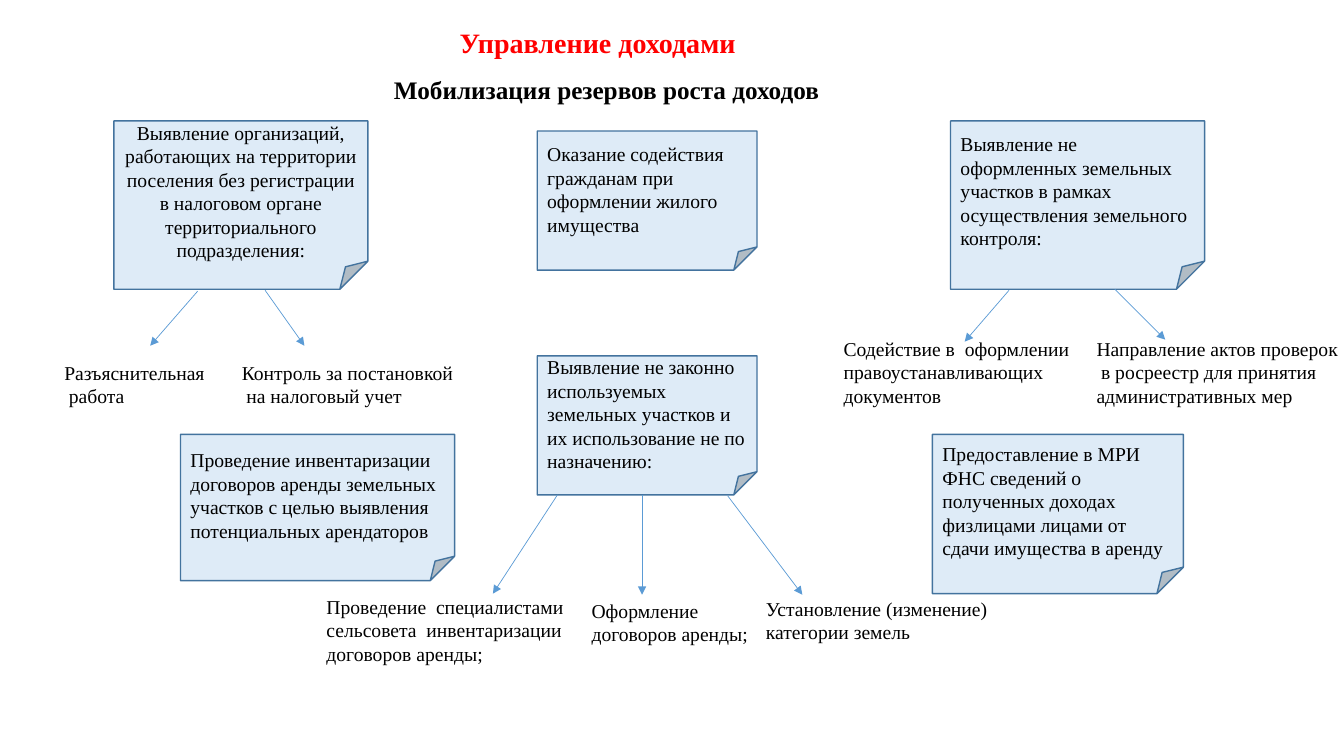
from dataclasses import dataclass

from lxml.etree import SubElement
from pptx import Presentation
from pptx.dml.color import RGBColor
from pptx.enum.shapes import MSO_CONNECTOR, MSO_SHAPE
from pptx.enum.text import MSO_ANCHOR, MSO_AUTO_SIZE, PP_ALIGN
from pptx.oxml.ns import qn
from pptx.shapes.autoshape import Shape
from pptx.slide import Slide
from pptx.util import Inches, Pt


@dataclass(frozen=True)
class Theme:
    font: str = "Times New Roman"
    heading: RGBColor = RGBColor(0xFF, 0x00, 0x00)
    ink: RGBColor = RGBColor(0x00, 0x00, 0x00)
    note_fill: RGBColor = RGBColor(0xDE, 0xEB, 0xF7)
    note_line: RGBColor = RGBColor(0x43, 0x73, 0x9E)
    arrow: RGBColor = RGBColor(0x5B, 0x9B, 0xD5)
    heading_size: int = 20
    subheading_size: int = 18
    body_size: int = 14
    note_width: float = 1
    arrow_width: float = 0.5


THEME = Theme()
CELL = Inches(0.1)  # one column or row of the slide grid
COLUMNS, ROWS = 133.33, 75
HANGING_SPACE = 0.45  # first-line indent, in columns


@dataclass(frozen=True)
class Area:
    column: float
    row: float
    columns: float
    rows: float

    def lengths(self) -> tuple[int, ...]:
        return tuple(cells(n) for n in (self.column, self.row, self.columns, self.rows))


@dataclass(frozen=True)
class Note:
    """A folded sheet naming one direction of work."""
    area: Area
    lines: tuple[str, ...]
    align: PP_ALIGN = PP_ALIGN.LEFT


@dataclass(frozen=True)
class Measure:
    """A plain caption that an arrow leads to."""
    area: Area
    lines: tuple[str, ...]
    wrap: bool = True


@dataclass(frozen=True)
class Arrow:
    start: tuple[float, float]
    end: tuple[float, float]


NOTES = (
    Note(Area(11.3, 12, 25.2, 16.7),
         ("Выявление организаций, работающих на территории поселения "
          "без регистрации в налоговом органе",
          "территориального подразделения:"), PP_ALIGN.CENTER),
    Note(Area(94.3, 12, 25.2, 16.7),
         ("Выявление не оформленных земельных участков в рамках "
          "осуществления земельного контроля:",)),
    Note(Area(53.3, 35.3, 21.8, 13.8),
         ("Выявление не законно используемых земельных участков "
          "и их использование не по назначению:",)),
    Note(Area(92.5, 43.1, 24.9, 15.8),
         ("Предоставление в МРИ ФНС сведений о полученных доходах "
          "физлицами лицами от сдачи имущества в аренду",)),
    Note(Area(53.3, 13, 21.8, 13.8),
         ("Оказание содействия гражданам при оформлении жилого имущества",)),
    Note(Area(17.9, 43.1, 27.2, 14.5),
         ("Проведение инвентаризации договоров аренды земельных участков "
          "с целью выявления потенциальных арендаторов",)),
)

# A measure's line after the first is indented when it continues the phrase.
MEASURES = (
    Measure(Area(5.4, 35.3, 17.6, 5.7), ("Разъяснительная", "работа")),
    Measure(Area(23, 35.3, 23.2, 5.7),
            ("Контроль за постановкой", "на налоговый учет"), wrap=False),
    Measure(Area(82.7, 32.9, 30.5, 8.1),
            ("Cодействие в  оформлении", "правоустанавливающих документов")),
    Measure(Area(107.8, 32.9, 36.6, 8.1),
            ("Направление актов проверок",
             "в росреестр для принятия административных мер")),
    Measure(Area(31.4, 58.5, 26.4, 8.1),
            ("Проведение  специалистами сельсовета  инвентаризации "
             "договоров аренды;",)),
    Measure(Area(57.7, 58.9, 18.9, 5.7), ("Оформление договоров аренды;",)),
    Measure(Area(75, 58.7, 24.3, 5.7),
            ("Установление (изменение) категории земель",)),
)
INDENTED = {"работа", "на налоговый учет",
            "в росреестр для принятия административных мер"}

ARROWS = (
    Arrow((19.6, 28.9), (14.9, 34.3)),
    Arrow((26.3, 28.8), (30.2, 34.3)),
    Arrow((110.6, 28.7), (115.6, 33.7)),
    Arrow((100.1, 28.8), (95.7, 33.9)),
    Arrow((72.2, 49.2), (79.6, 59)),
    Arrow((55.3, 49.1), (48.9, 58.9)),
    Arrow((63.7, 49.1), (63.7, 59)),
)


def cells(count: float) -> int:
    return round(count * CELL)


def write(shape: Shape, lines: tuple[str, ...], *, size: int = THEME.body_size,
          color: RGBColor = THEME.ink, bold: bool = False, wrap: bool = True,
          align: PP_ALIGN = PP_ALIGN.LEFT,
          anchor: MSO_ANCHOR = MSO_ANCHOR.TOP) -> None:
    frame = shape.text_frame
    frame.text = "\n".join(lines)
    frame.auto_size = MSO_AUTO_SIZE.NONE
    frame.word_wrap = wrap
    frame.vertical_anchor = anchor
    for paragraph in frame.paragraphs:
        paragraph.alignment = align
        if paragraph.text in INDENTED:
            paragraph._p.get_or_add_pPr().set("indent", str(cells(HANGING_SPACE)))
        for run in paragraph.runs:
            run.font.name = THEME.font
            run.font.size = Pt(size)
            run.font.bold = bold
            run.font.color.rgb = color


def draw_note(slide: Slide, note: Note) -> None:
    sheet = slide.shapes.add_shape(MSO_SHAPE.FOLDED_CORNER, *note.area.lengths())
    sheet.shadow.inherit = False
    sheet.fill.solid()
    sheet.fill.fore_color.rgb = THEME.note_fill
    sheet.line.color.rgb = THEME.note_line
    sheet.line.width = Pt(THEME.note_width)
    write(sheet, note.lines, align=note.align, anchor=MSO_ANCHOR.MIDDLE)


def draw_measure(slide: Slide, measure: Measure) -> None:
    caption = slide.shapes.add_textbox(*measure.area.lengths())
    write(caption, measure.lines, wrap=measure.wrap)


def draw_arrow(slide: Slide, arrow: Arrow) -> None:
    ends = (cells(n) for n in arrow.start + arrow.end)
    pointer = slide.shapes.add_connector(MSO_CONNECTOR.STRAIGHT, *ends)
    pointer.line.color.rgb = THEME.arrow
    pointer.line.width = Pt(THEME.arrow_width)
    SubElement(pointer.line._get_or_add_ln(), qn("a:tailEnd"), type="triangle")
    SubElement(pointer._element.spPr, qn("a:effectLst"))


def main() -> None:
    deck = Presentation()
    deck.slide_width, deck.slide_height = cells(COLUMNS), cells(ROWS)
    slide = deck.slides.add_slide(deck.slide_layouts[5])

    # Headings
    heading = slide.shapes.title
    heading.left, heading.top, heading.width, heading.height = Area(
        44.6, 2, 29.6, 4.4).lengths()
    write(heading, ("Управление доходами",), size=THEME.heading_size,
          color=THEME.heading, bold=True, wrap=False)
    subheading = slide.shapes.add_textbox(*Area(38.1, 6.9, 44.7, 4).lengths())
    write(subheading, ("Мобилизация резервов роста доходов",),
          size=THEME.subheading_size, bold=True, wrap=False)

    # Directions, the arrows from them and the measures they lead to
    for note in NOTES:
        draw_note(slide, note)
    for arrow in ARROWS:
        draw_arrow(slide, arrow)
    for measure in MEASURES:
        draw_measure(slide, measure)

    deck.save("out.pptx")


if __name__ == "__main__":
    main()
